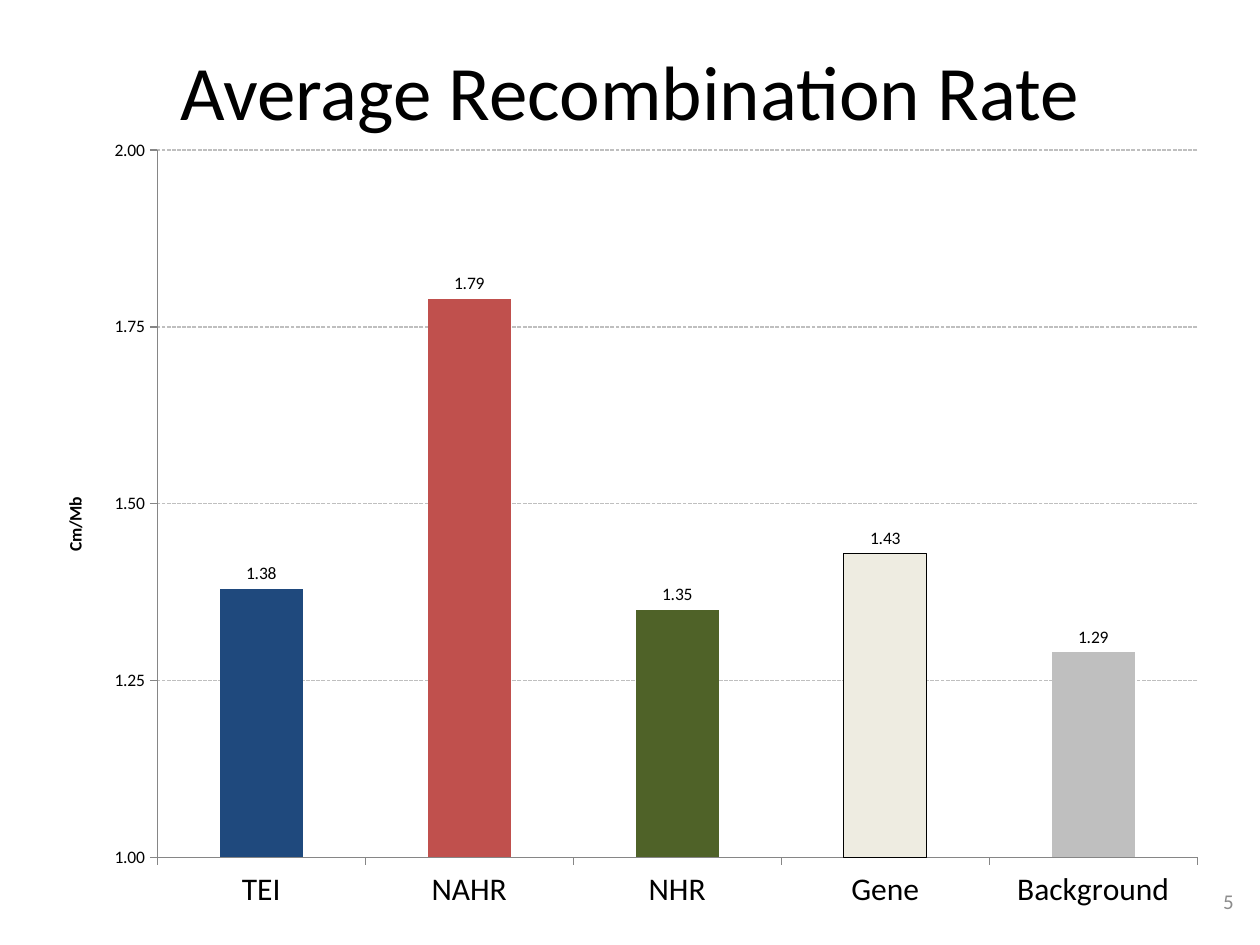
from lxml import etree
from pptx import Presentation
from pptx.chart.data import CategoryChartData
from pptx.dml.color import RGBColor
from pptx.enum import chart as ce, dml, text
from pptx.oxml.ns import qn
from pptx.util import Inches, Pt

TITLE = "Average Recombination Rate"
PAGE = "5"
AXIS_TITLE = "Cm/Mb"
RATES = [
    ("TEI", 1.38, "1F497D"),
    ("NAHR", 1.79, "C0504D"),
    ("NHR", 1.35, "4F6228"),
    ("Gene", 1.43, "EEECE1"),
    ("Background", 1.29, "BFBFBF"),
]
OUTLINED = "Gene"
THEME = {
    "font": "Calibri", "ink": "000000", "muted": "8C8C8C",
    "axis": "868686", "grid": "BFBFBF", "bar": "4F81BD",
    "title": 44, "category": 18, "page": 12, "chart": 10,
}
PLOT = {"x": 0.1, "y": 0.03, "w": 0.88, "h": 0.88}


def rgb(name):
    return RGBColor.from_string(THEME.get(name, name))


def style(font, size, color="ink", bold=False):
    font.name = THEME["font"]
    font.size = Pt(THEME[size])
    font.bold = bold
    font.color.rgb = rgb(color)


def add_text(s, words, box, size, color, align):
    tf = s.shapes.add_textbox(*map(Inches, box)).text_frame
    tf.word_wrap = True
    tf.vertical_anchor = text.MSO_ANCHOR.MIDDLE
    tf.text = words
    p = tf.paragraphs[0]
    p.alignment = align
    style(p.runs[0].font, size, color)


def place_plot(chart):
    area = chart._chartSpace.chart.plotArea
    for old in area.findall(qn("c:layout")):
        area.remove(old)
    layout = etree.Element(qn("c:layout"))
    manual = etree.SubElement(layout, qn("c:manualLayout"))
    settings = [("layoutTarget", "inner"), ("xMode", "edge"), ("yMode", "edge")]
    for tag, val in settings + list(PLOT.items()):
        etree.SubElement(manual, qn(f"c:{tag}")).set("val", str(val))
    area.insert(0, layout)


def add_rate_chart(s):
    data = CategoryChartData(number_format="0.00")
    data.categories = [name for name, _, _ in RATES]
    data.add_series("Series 1", [rate for _, rate, _ in RATES])
    box = map(Inches, (0.31, 1, 9.38, 6.38))
    chart = s.shapes.add_chart(ce.XL_CHART_TYPE.COLUMN_CLUSTERED, *box, data).chart
    chart.has_legend = False
    chart.has_title = False
    style(chart.font, "chart")
    place_plot(chart)

    cat, val = chart.category_axis, chart.value_axis
    for axis, size in ((cat, "category"), (val, "chart")):
        axis.major_tick_mark = ce.XL_TICK_MARK.OUTSIDE
        axis.format.line.color.rgb = rgb("axis")
        axis.format.line.width = Pt(0.75)
        style(axis.tick_labels.font, size)
    val.minimum_scale, val.maximum_scale, val.major_unit = 1, 2, 0.25
    val.tick_labels.number_format = "0.00"
    val.tick_labels.number_format_is_linked = False
    val.has_major_gridlines = True
    grid = val.major_gridlines.format.line
    grid.color.rgb = rgb("grid")
    grid.width = Pt(0.75)
    grid.dash_style = dml.MSO_LINE.SQUARE_DOT
    tf = val.axis_title.text_frame
    tf.text = AXIS_TITLE
    style(tf.paragraphs[0].runs[0].font, "chart", bold=True)

    plot = chart.plots[0]
    plot.gap_width = 150
    plot.vary_by_categories = False
    series = plot.series[0]
    series.format.fill.solid()
    series.format.fill.fore_color.rgb = rgb("bar")
    for i, (name, _, color) in enumerate(RATES):
        bar = series.points[i].format
        bar.fill.solid()
        bar.fill.fore_color.rgb = rgb(color)
        if name == OUTLINED:
            bar.line.color.rgb = rgb("ink")
            bar.line.width = Pt(0.75)
    labels = series.data_labels
    labels.show_value = True
    labels.position = ce.XL_LABEL_POSITION.OUTSIDE_END
    labels.number_format = "0.00"
    labels.number_format_is_linked = False
    style(labels.font, "chart")


def main():
    prs = Presentation()
    prs.slide_width, prs.slide_height = Inches(10), Inches(7.5)
    s = prs.slides.add_slide(prs.slide_layouts[6])
    add_rate_chart(s)
    add_text(s, TITLE, (0.5, 0.09, 9, 1.25), "title", "ink", text.PP_ALIGN.CENTER)
    add_text(s, PAGE, (7.56, 6.95, 2.33, 0.4), "page", "muted", text.PP_ALIGN.RIGHT)
    prs.save("out.pptx")


if __name__ == "__main__":
    main()
